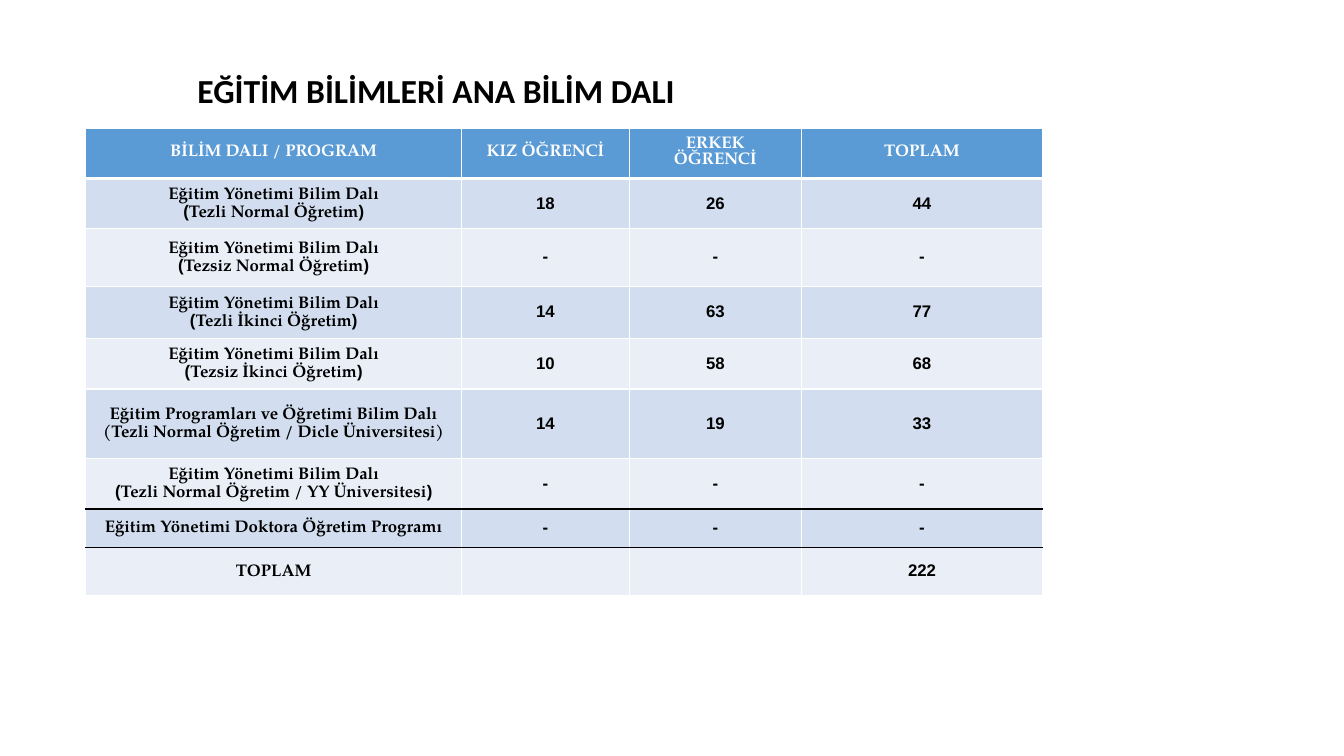
from pptx import Presentation
from pptx.dml.color import RGBColor
from pptx.enum.text import MSO_ANCHOR, PP_ALIGN
from pptx.oxml.ns import qn
from pptx.util import Inches, Pt
from lxml.etree import SubElement

# Content
TITLE = "EĞİTİM BİLİMLERİ ANA BİLİM DALI"
HEADER = ("BİLİM DALI / PROGRAM", "KIZ ÖĞRENCİ", "ERKEK ÖĞRENCİ", "TOPLAM")
MANAGEMENT = "Eğitim Yönetimi Bilim Dalı"
PROGRAMS = [
    (f"{MANAGEMENT}\n(Tezli Normal Öğretim)", "18", "26", "44"),
    (f"{MANAGEMENT}\n(Tezsiz Normal Öğretim)", "-", "-", "-"),
    (f"{MANAGEMENT}\n(Tezli İkinci Öğretim)", "14", "63", "77"),
    (f"{MANAGEMENT}\n(Tezsiz İkinci Öğretim)", "10", "58", "68"),
    ("Eğitim Programları ve Öğretimi Bilim Dalı\n"
     "(Tezli Normal Öğretim / Dicle Üniversitesi)", "14", "19", "33"),
    (f"{MANAGEMENT}\n(Tezli Normal Öğretim / YY Üniversitesi)", "-", "-", "-"),
    ("Eğitim Yönetimi Doktora Öğretim Programı", "-", "-", "-"),
    ("TOPLAM", "", "", "222"),
]
COLUMN_WIDTHS = (3.73, 1.66, 1.71, 2.39)
ROW_HEIGHTS = (0.5, 0.5, 0.57, 0.52, 0.5, 0.69, 0.5, 0.38, 0.48)
LEFT_TO_RIGHT = {(0, 0), (5, 0)}
DARK_RULES = (6, 7)  # rows with a dark line below

THEME = {
    "black": "000000", "white": "FFFFFF", "header": "5B9BD5",
    "bands": ("EAEFF7", "D2DEEF"),
    "title_font": "Calibri", "table_font": "TeX Gyre Pagella",
    "number_font": "Arial",
    "title_size": 24, "table_size": 12,
    "header_leading": 11.4, "body_leading": 12.8,
}


def write(frame, text, *, font, size, color, align=PP_ALIGN.LEFT,
          leading=None, rtl=False):
    for index, line in enumerate(text.split("\n")):
        para = frame.add_paragraph() if index else frame.paragraphs[0]
        para.alignment = align
        if leading:
            para.line_spacing = Pt(leading)
        if rtl:
            para._p.get_or_add_pPr().set("rtl", "1")
        span = para.add_run()
        span.text = line
        span.font.name = font
        span.font.size = Pt(size)
        span.font.bold = True
        span.font.color.rgb = RGBColor.from_string(color)
        if rtl:
            SubElement(span._r.get_or_add_rPr(), qn("a:cs"),
                       typeface=THEME["number_font"])


def draw_borders(cell, **sides):
    properties = cell._tc.get_or_add_tcPr()
    for side, (color, width) in sides.items():
        line = SubElement(properties, qn(f"a:ln{side}"), w=str(Pt(width)))
        fill = SubElement(line, qn("a:solidFill"))
        SubElement(fill, qn("a:srgbClr"), val=color)


def rule_below(row):
    if row in DARK_RULES:
        return THEME["black"], 1
    return THEME["white"], 3 if row == 0 else 1


deck = Presentation()
deck.slide_width, deck.slide_height = Inches(13.33), Inches(7.5)
page = deck.slides.add_slide(deck.slide_layouts[6])

# Title
box = page.shapes.add_textbox(Inches(1.86), Inches(0.64), Inches(7.4), Inches(0.91))
box.text_frame.word_wrap = True
write(box.text_frame, TITLE, font=THEME["title_font"],
      size=THEME["title_size"], color=THEME["black"])

# Student table
rows = [HEADER, *PROGRAMS]
table = page.shapes.add_table(
    len(rows), len(HEADER), Inches(0.85), Inches(1.27),
    Inches(sum(COLUMN_WIDTHS)), Inches(sum(ROW_HEIGHTS))).table
for column, width in zip(table.columns, COLUMN_WIDTHS):
    column.width = Inches(width)
for row, height in zip(table.rows, ROW_HEIGHTS):
    row.height = Inches(height)

edge = (THEME["white"], 1)
for r, values in enumerate(rows):
    is_header = r == 0
    for c, value in enumerate(values):
        cell = table.cell(r, c)
        cell.vertical_anchor = MSO_ANCHOR.MIDDLE
        cell.margin_left = cell.margin_right = Inches(0.15)
        cell.margin_top = cell.margin_bottom = Inches(0.05)
        draw_borders(cell, L=edge, R=edge,
                     T=edge if is_header else rule_below(r - 1), B=rule_below(r))
        cell.fill.solid()
        cell.fill.fore_color.rgb = RGBColor.from_string(
            THEME["header"] if is_header else THEME["bands"][r % 2])
        if value:
            write(cell.text_frame, value, font=THEME["table_font"],
                  size=THEME["table_size"], align=PP_ALIGN.CENTER,
                  color=THEME["white" if is_header else "black"],
                  leading=THEME["header_leading" if is_header else "body_leading"],
                  rtl=(r, c) not in LEFT_TO_RIGHT)

deck.save("out.pptx")
